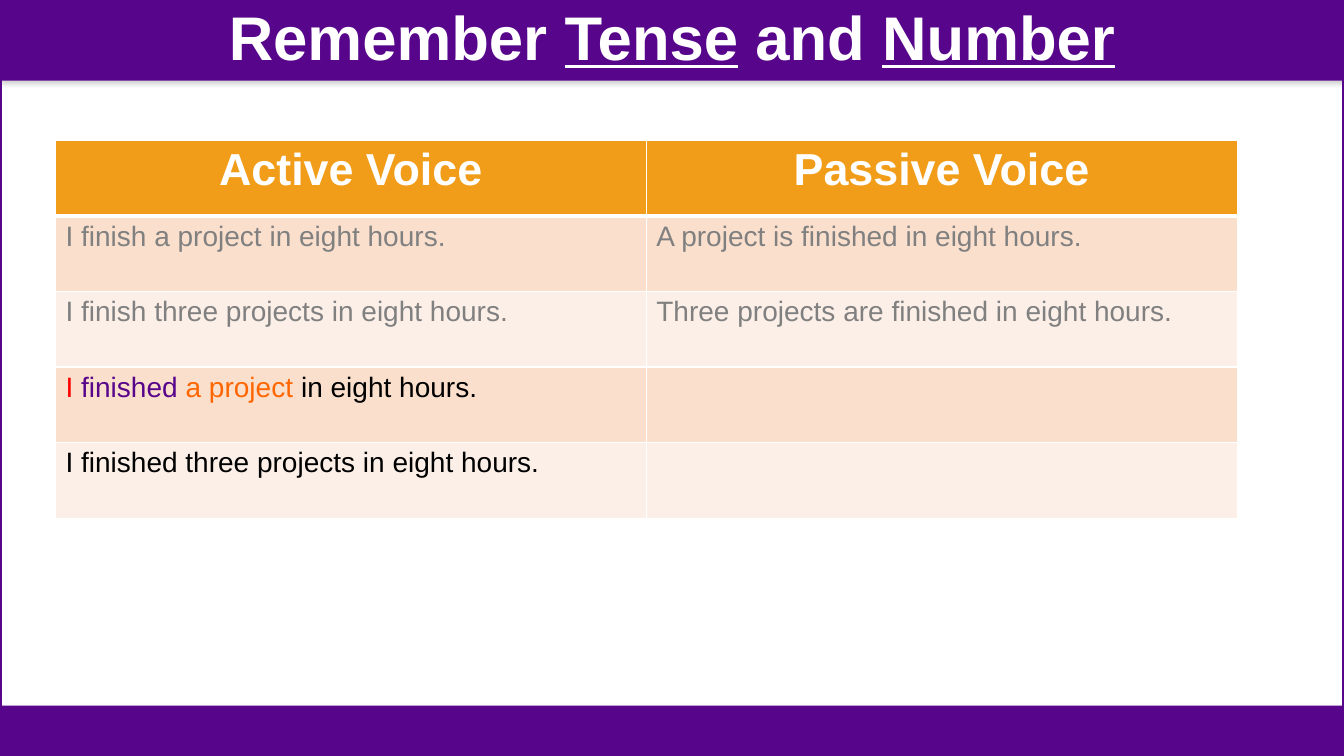
import lxml.etree
import pptx
import pptx.dml.color
import pptx.enum.shapes
import pptx.enum.text
import pptx.oxml
import pptx.oxml.ns
import pptx.util

# Content: a run is (text, emphasis)
TITLE = [("Remember ", False), ("Tense", True), (" and ", False), ("Number", True)]
HEADINGS = ["Active Voice", "Passive Voice"]
# Each cell is a list of (text, colour role) runs
SENTENCES = [
    [[("I finish a project in eight hours.", "done")],
     [("A project is finished in eight hours.", "done")]],
    [[("I finish three projects in eight hours.", "done")],
     [("Three projects are finished in eight hours.", "done")]],
    [[("I ", "subject"), ("finished ", "verb"), ("a project", "object"),
      (" in eight hours.", "plain")], []],
    [[("I finished three projects in eight hours.", "plain")], []],
]

THEME = {
    "font": "Arial",
    "size": {"title": 44, "heading": 32, "sentence": 20},
    "color": {
        "purple": "57068C", "white": "FFFFFF", "header": "F19D19",
        "bands": ["FADFCC", "FCEFE8"], "shadow": "808080",
        "done": "808080", "subject": "FF0000", "verb": "57068C",
        "object": "FF6600", "plain": "000000",
    },
}
COLOR, SIZE = THEME["color"], THEME["size"]

# Layout in inches
WIDTH, HEIGHT = 13.33, 7.5
TOP_BAR, BOTTOM_BAR = 0.8, 0.5
TABLE_LEFT, TABLE_TOP = 0.55, 1.39
COLUMN, ROW = 5.86, 0.75


def inches(*lengths):
    return [pptx.util.Inches(length) for length in lengths]


def rgb(value):
    return pptx.dml.color.RGBColor.from_string(value)


def add_run(paragraph, text, size, color, bold=False, underline=False):
    run = paragraph.add_run()
    run.text = text
    run.font.name = THEME["font"]
    run.font.size = pptx.util.Pt(size)
    run.font.bold = bold
    run.font.underline = underline
    run.font.color.rgb = rgb(color)


def add_rectangle(slide, left, top, width, height):
    rectangle = slide.shapes.add_shape(
        pptx.enum.shapes.MSO_SHAPE.RECTANGLE, *inches(left, top, width, height))
    rectangle.shadow.inherit = False
    return rectangle


def add_bar(slide, top, height):
    bar = add_rectangle(slide, 0, top, WIDTH, height)
    bar.fill.solid()
    bar.fill.fore_color.rgb = rgb(COLOR["purple"])
    bar.line.fill.background()
    effects = bar.element.spPr.find(pptx.oxml.ns.qn("a:effectLst"))
    effects.append(pptx.oxml.parse_xml(
        f'<a:outerShdw {pptx.oxml.ns.nsdecls("a")} blurRad="{pptx.util.Pt(3.1)}" '
        f'dist="{pptx.util.Pt(1.8)}" dir="5400000" rotWithShape="0">'
        f'<a:srgbClr val="{COLOR["shadow"]}"><a:alpha val="35000"/></a:srgbClr>'
        '</a:outerShdw>'))


def style_cell(cell, fill, bottom=1):
    properties = cell._tc.get_or_add_tcPr()
    for side, points in (("L", 1), ("R", 1), ("T", 1), ("B", bottom)):
        border = lxml.etree.SubElement(
            properties, pptx.oxml.ns.qn(f"a:ln{side}"), w=str(pptx.util.Pt(points)))
        solid = lxml.etree.SubElement(border, pptx.oxml.ns.qn("a:solidFill"))
        lxml.etree.SubElement(solid, pptx.oxml.ns.qn("a:srgbClr"), val=COLOR["white"])
    cell.fill.solid()
    cell.fill.fore_color.rgb = rgb(fill)


def add_frame(slide):
    add_bar(slide, 0, TOP_BAR)
    outline = add_rectangle(slide, 0, 0, WIDTH, HEIGHT)
    outline.fill.background()
    outline.line.color.rgb = rgb(COLOR["purple"])
    outline.line.width = pptx.util.Pt(2.25)
    add_bar(slide, HEIGHT - BOTTOM_BAR, BOTTOM_BAR)


def add_title(slide):
    title = slide.shapes.title
    title.left, title.top, title.width, title.height = inches(0, 0, WIDTH, TOP_BAR)
    # Bring the title in front of its bar
    title.element.getparent().append(title.element)
    frame = title.text_frame
    frame.word_wrap = True
    frame.auto_size = pptx.enum.text.MSO_AUTO_SIZE.NONE
    frame.vertical_anchor = pptx.enum.text.MSO_ANCHOR.MIDDLE
    line = frame.paragraphs[0]
    line.alignment = pptx.enum.text.PP_ALIGN.CENTER
    line.line_spacing = 0.9
    for text, emphasis in TITLE:
        add_run(line, text, SIZE["title"], COLOR["white"], True, emphasis)


def add_voice_table(slide):
    rows, columns = len(SENTENCES) + 1, len(HEADINGS)
    voices = slide.shapes.add_table(rows, columns, *inches(
        TABLE_LEFT, TABLE_TOP, columns * COLUMN, rows * ROW)).table

    # Heading row
    for column, heading in enumerate(HEADINGS):
        cell = voices.cell(0, column)
        style_cell(cell, COLOR["header"], bottom=3)
        line = cell.text_frame.paragraphs[0]
        line.alignment = pptx.enum.text.PP_ALIGN.CENTER
        add_run(line, heading, SIZE["heading"], COLOR["white"], True)

    # Sentence rows in alternating bands
    for row, sentences in enumerate(SENTENCES):
        for column, runs in enumerate(sentences):
            cell = voices.cell(row + 1, column)
            style_cell(cell, COLOR["bands"][row % 2], bottom=1)
            if row == 0:
                top = cell._tc.tcPr.find(pptx.oxml.ns.qn("a:lnT"))
                top.set("w", str(pptx.util.Pt(3)))
            for text, role in runs:
                add_run(cell.text_frame.paragraphs[0], text, SIZE["sentence"], COLOR[role])


def main():
    deck = pptx.Presentation()
    deck.slide_width, deck.slide_height = inches(WIDTH, HEIGHT)
    slide = deck.slides.add_slide(deck.slide_layouts.get_by_name("Title Only"))
    add_frame(slide)
    add_title(slide)
    add_voice_table(slide)
    deck.save("out.pptx")


if __name__ == "__main__":
    main()
